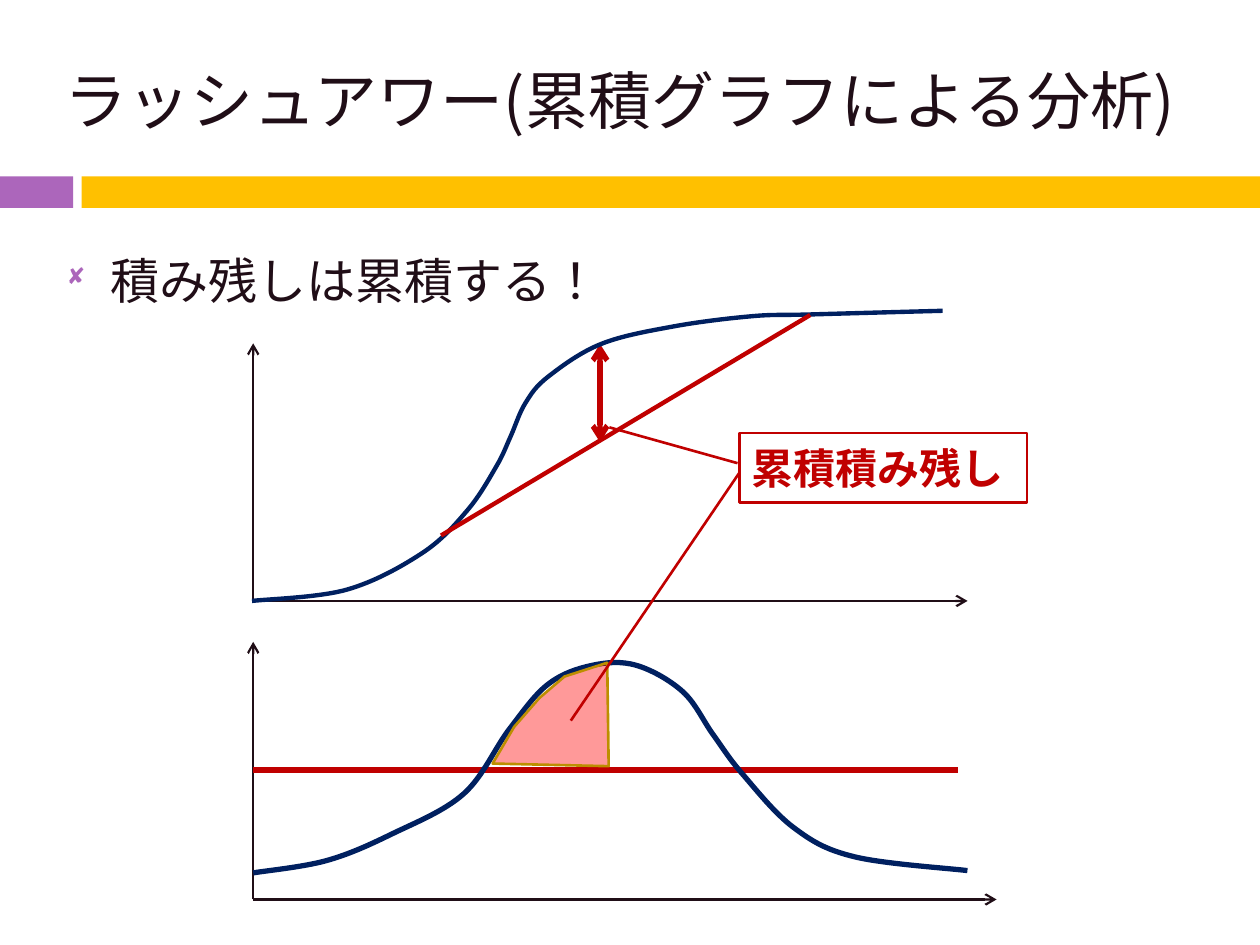
"""Build the slide on rush hour analysis with cumulative graphs."""
from dataclasses import dataclass
from typing import Optional

from lxml import etree
from pptx import Presentation, util as u
from pptx.dml import color
from pptx.enum import lang, shapes, text
from pptx.oxml import ns

Point = tuple[float, float]


@dataclass(frozen=True)
class Theme:
    font: str = "Noto Sans CJK JP"
    bullet_font: str = "Wingdings"
    ink: str = "200E17"
    purple: str = "AC66BB"
    gold: str = "FFC000"
    navy: str = "002060"
    red: str = "C00000"
    area: str = "FF0000"
    area_edge: str = "BD8E00"
    title: float = 36
    body: float = 28
    label: float = 24


@dataclass(frozen=True)
class Stroke:
    color: str
    width: float


@dataclass(frozen=True)
class Segment:
    start: Point
    end: Point
    stroke: Stroke
    arrows: tuple[str, ...] = ()


@dataclass(frozen=True)
class Outline:
    points: list[Point]
    stroke: Stroke
    fill: Optional[str] = None
    opacity: int = 100
    curved: bool = False


THEME = Theme()
AXIS = Stroke(THEME.ink, 1.25)
POINTER = Stroke(THEME.red, 1.5)
ORIGIN_X = 144.7
UPPER_Y, LOWER_Y = 343.4, 514
AXIS_RISE = 147.2

CUMULATIVE = [
    (144, 343.4), (198, 337), (241.2, 316.1), (267.1, 291.6), (283.7, 266.4),
    (291.6, 249.8), (300.2, 230.4), (313.2, 215.3), (343.4, 196.6),
    (385.2, 186.5), (429.8, 180.7), (463, 179.7), (538.6, 177.6),
]
DEMAND = [
    (144.7, 498.8), (186.5, 491.8), (223.9, 476.6), (265, 453.6), (290.9, 416.9),
    (313.2, 391), (338.4, 380.2), (363.6, 380.2), (390.2, 395.3),
    (407.5, 419.8), (424.1, 442.1), (453.6, 473), (488.2, 489.6), (552.8, 497.5),
]
BACKLOG = [
    (281.5, 436.3), (293.8, 415.4), (308.2, 398.9), (322.6, 386.6),
    (347, 378.7), (347.8, 437.8), (281.5, 436.3),
]


def add_node(parent, tag: str, **attributes: str):
    """Append a DrawingML element."""
    return etree.SubElement(parent, ns.qn(f"a:{tag}"), attributes)


def apply_format(target, values: dict) -> None:
    """Set each attribute named in the format values."""
    for name, value in values.items():
        setattr(target, name, value)


def set_stroke(shape, stroke: Stroke) -> None:
    """Give a shape its line colour and width."""
    shape.line.color.rgb = color.RGBColor.from_string(stroke.color)
    shape.line.width = u.Pt(stroke.width)


def set_fill(shape, fill: Optional[str]) -> None:
    """Fill a shape with one colour, or leave it open."""
    if fill is None:
        shape.fill.background()
        return
    shape.fill.solid()
    shape.fill.fore_color.rgb = color.RGBColor.from_string(fill)


def write_text(box, words: str, size: float, ink: str, anchor, bold: bool = False):
    """Write one left-aligned paragraph into a box and return it."""
    apply_format(box.text_frame, {"word_wrap": True, "vertical_anchor": anchor})
    para = box.text_frame.paragraphs[0]
    para.alignment = text.PP_ALIGN.LEFT
    span = para.add_run()
    span.text = words
    apply_format(span.font, {"name": THEME.font, "size": u.Pt(size), "bold": bold,
                             "language_id": lang.MSO_LANGUAGE_ID.JAPANESE})
    span.font.color.rgb = color.RGBColor.from_string(ink)
    add_node(span.font._element, "ea", typeface=THEME.font)
    return para


def add_bullet(para) -> None:
    """Give a paragraph a hanging square bullet."""
    para.space_before = u.Pt(7)
    layout = para._p.get_or_add_pPr()
    layout.set("marL", str(u.Pt(25.2)))
    layout.set("indent", str(-u.Pt(25.2)))
    add_node(add_node(layout, "buClr"), "srgbClr", val=THEME.purple)
    add_node(layout, "buSzPct", val="60000")
    add_node(layout, "buFont", typeface=THEME.bullet_font)
    add_node(layout, "buChar", char="◻")


def add_textbox(page, *bounds: float):
    """Add a text box with bounds in points."""
    return page.shapes.add_textbox(*map(u.Pt, bounds))


def add_band(page, left: float, width: float, fill: str) -> None:
    """Add one part of the band under the title."""
    band = page.shapes.add_shape(
        shapes.MSO_SHAPE.RECTANGLE, *map(u.Pt, (left, 100.8, width, 18)))
    band.shadow.inherit = False
    set_fill(band, fill)
    band.line.fill.background()


def add_segment(page, segment: Segment) -> None:
    """Draw a straight line with its arrowheads."""
    line = page.shapes.add_connector(
        shapes.MSO_CONNECTOR.STRAIGHT, *map(u.Pt, segment.start + segment.end))
    set_stroke(line, segment.stroke)
    for end in segment.arrows:
        add_node(line.line._get_or_add_ln(), end, type="arrow")
    add_node(line._element.spPr, "effectLst")


def bend_lines(shape) -> None:
    """Turn the straight pieces of a freeform into one smooth curve."""
    knots = [(int(node.get("x")), int(node.get("y")))
             for node in shape._element.spPr.iter(ns.qn("a:pt"))]
    padded = [knots[0], *knots, knots[-1]]
    pieces = list(shape._element.spPr.iter(ns.qn("a:lnTo")))
    for piece, a, b, c, d in zip(pieces, padded, padded[1:], padded[2:], padded[3:]):
        leave = [q + (r - p) / 6 for p, q, r in zip(a, b, c)]
        arrive = [r - (s - q) / 6 for q, r, s in zip(b, c, d)]
        piece.clear()
        piece.tag = ns.qn("a:cubicBezTo")
        for x, y in (leave, arrive, c):
            add_node(piece, "pt", x=str(round(x)), y=str(round(y)))


def add_outline(page, outline: Outline) -> None:
    """Draw a freeform through points, closed when the ends meet."""
    first, *rest = [(u.Pt(x), u.Pt(y)) for x, y in outline.points]
    builder = page.shapes.build_freeform(*first)
    builder.add_line_segments(rest, close=first == rest[-1])
    shape = builder.convert_to_shape()
    shape.shadow.inherit = False
    set_fill(shape, outline.fill)
    set_stroke(shape, outline.stroke)
    if outline.curved:
        bend_lines(shape)
    if outline.fill:
        tint = shape._element.spPr.find(".//" + ns.qn("a:srgbClr"))
        add_node(tint, "alpha", val=str(outline.opacity * 1000))


def add_axes(page, base: float, length: float) -> None:
    """Draw the two axes of a graph."""
    origin = (ORIGIN_X, base)
    for end in ((ORIGIN_X, base - AXIS_RISE), (ORIGIN_X + length, base)):
        add_segment(page, Segment(origin, end, AXIS, ("tailEnd",)))


def add_callout(page) -> None:
    """Add the label with its pointer to the upper graph."""
    callout = page.shapes.add_shape(
        shapes.MSO_SHAPE.LINE_CALLOUT_1, *map(u.Pt, (422.6, 247.4, 164.2, 39.6)))
    for index, value in enumerate((0.436, -0.007, -0.081, -0.453)):
        callout.adjustments[index] = value
    callout.shadow.inherit = False
    set_fill(callout, None)
    set_stroke(callout, POINTER)
    write_text(callout, "累積積み残し", THEME.label, THEME.red,
               text.MSO_ANCHOR.MIDDLE, bold=True)


def main() -> None:
    """Create the deck and save it."""
    deck = Presentation()
    apply_format(deck, {"slide_width": u.Pt(720), "slide_height": u.Pt(540)})
    page = deck.slides.add_slide(deck.slide_layouts[6])
    add_band(page, 0, 41.8, THEME.purple)
    add_band(page, 46.6, 673.4, THEME.gold)
    write_text(add_textbox(page, 29.5, 18, 670.3, 77.8), "ラッシュアワー(累積グラフによる分析)",
               THEME.title, THEME.ink, text.MSO_ANCHOR.MIDDLE)
    add_bullet(write_text(add_textbox(page, 31, 139.7, 663.1, 374.4), "積み残しは累積する！",
                          THEME.body, THEME.ink, text.MSO_ANCHOR.TOP))
    add_axes(page, LOWER_Y, 424.8)
    add_segment(page, Segment((ORIGIN_X, 440), (547.2, 440), Stroke(THEME.red, 3)))
    add_outline(page, Outline(DEMAND, Stroke(THEME.navy, 3), curved=True))
    add_axes(page, UPPER_Y, 408.2)
    add_segment(page, Segment((342.9, 196.6), (342.9, 252.7), Stroke(THEME.red, 3),
                              ("headEnd", "tailEnd")))
    add_outline(page, Outline(BACKLOG, Stroke(THEME.area_edge, 1.5), THEME.area, 40))
    add_callout(page)
    add_segment(page, Segment((422.6, 270), (326.2, 411.8), POINTER))
    add_outline(page, Outline(CUMULATIVE, Stroke(THEME.navy, 2.5), curved=True))
    add_segment(page, Segment((252, 306), (463, 180), Stroke(THEME.red, 2.5)))
    deck.save("out.pptx")


if __name__ == "__main__":
    main()
